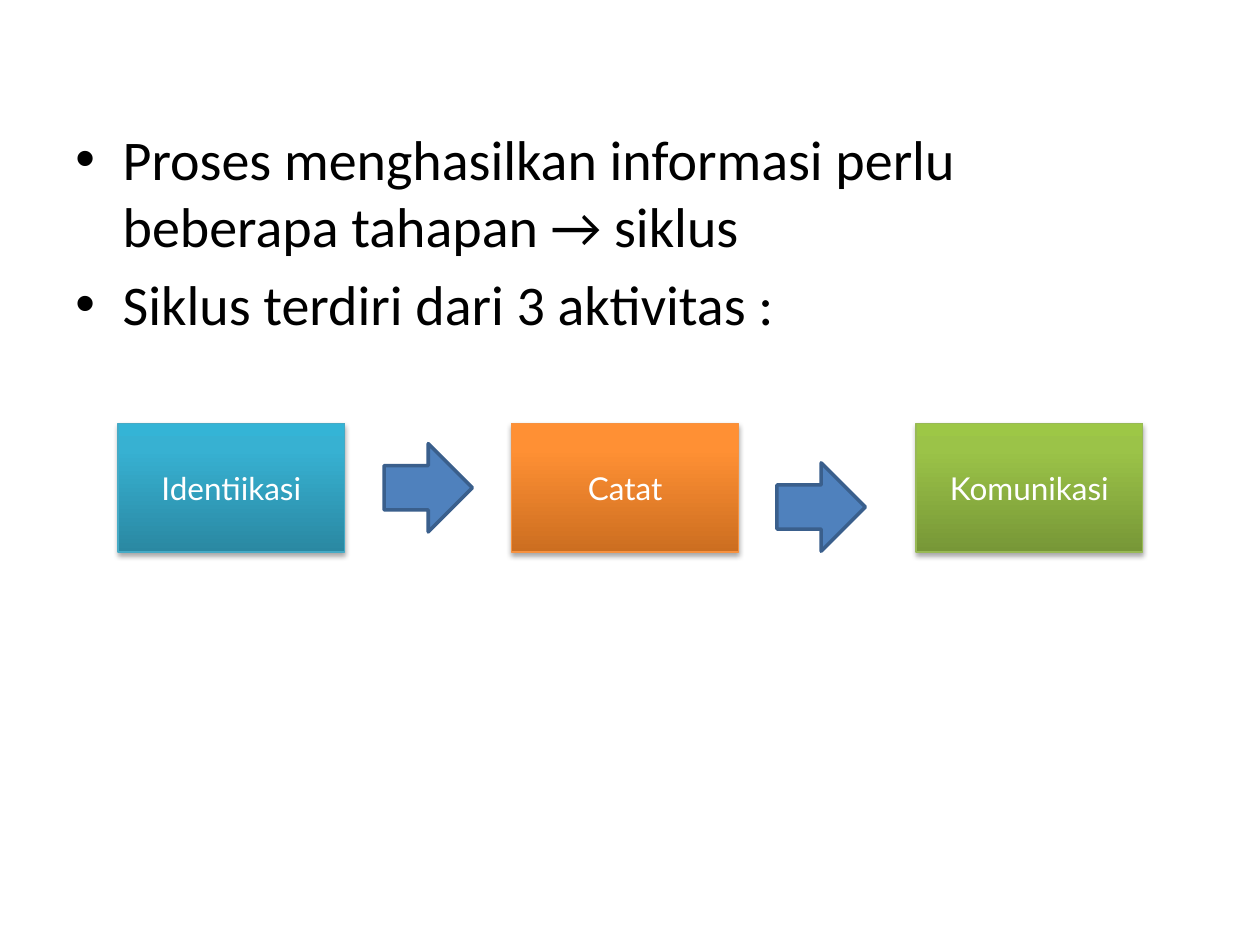
import copy

import pptx
import pptx.dml.color
import pptx.enum.shapes
import pptx.enum.text
import pptx.oxml.ns
import pptx.oxml.xmlchemy
import pptx.util
from lxml import etree

Pt = pptx.util.Pt
RGBColor = pptx.dml.color.RGBColor
qn = pptx.oxml.ns.qn
Shape = pptx.enum.shapes.MSO_SHAPE

BLACK = RGBColor(0x00, 0x00, 0x00)
WHITE = RGBColor(0xFF, 0xFF, 0xFF)
ARROW_FILL = RGBColor(0x4F, 0x81, 0xBD)
ARROW_LINE = RGBColor(0x3A, 0x5F, 0x8C)
TEAL = (RGBColor(0x2A, 0x88, 0xA2), RGBColor(0x37, 0xB1, 0xD2), RGBColor(0x34, 0xB4, 0xD6))
TEAL_LINE = RGBColor(0x46, 0xAA, 0xC5)
ORANGE = (RGBColor(0xCC, 0x6E, 0x20), RGBColor(0xFF, 0x90, 0x34), RGBColor(0xFF, 0x91, 0x36))
ORANGE_LINE = RGBColor(0xF6, 0x92, 0x40)
GREEN = (RGBColor(0x77, 0x97, 0x37), RGBColor(0x9B, 0xC3, 0x48), RGBColor(0x9D, 0xC7, 0x46))
GREEN_LINE = RGBColor(0x98, 0xB9, 0x55)

GRADIENT_POSITIONS = (0, 0.8, 1)
BULLETS = (
    "Proses menghasilkan informasi perlu beberapa tahapan → siklus",
    "Siklus terdiri dari 3 aktivitas :",
)
# Label, left offset, gradient colours, outline colour
ACTIVITIES = (
    ("Identiikasi", 0, TEAL, TEAL_LINE),
    ("Catat", 225, ORANGE, ORANGE_LINE),
    ("Komunikasi", 456, GREEN, GREEN_LINE),
)
ARROW_OFFSETS = ((152, 11.5), (376.5, 22.5))
ARROW_SIZE = 50.5


def format_text(paragraph, font_name, size, color):
    for run in paragraph.runs:
        run.font.name = font_name
        run.font.size = Pt(size)
        run.font.color.rgb = color


def add_bullets(slide, left, top, width, height):
    box = slide.shapes.add_textbox(Pt(left), Pt(top), Pt(width), Pt(height))
    text_frame = box.text_frame
    text_frame.word_wrap = True
    text_frame.text = "\n".join(BULLETS)
    for paragraph in text_frame.paragraphs:
        paragraph.space_before = Pt(6.4)
        format_text(paragraph, "Calibri", 32, BLACK)
        properties = paragraph._p.get_or_add_pPr()
        properties.set("marL", str(Pt(27)))
        properties.set("indent", str(Pt(-27)))
        etree.SubElement(properties, qn("a:buFont"), typeface="Arial")
        etree.SubElement(properties, qn("a:buChar"), char="•")


def set_gradient(shape, colors):
    """Fill from bottom to top with three colours."""
    shape.fill.gradient()
    shape.fill.gradient_angle = 90
    stop_list = shape._element.spPr.find(".//" + qn("a:gsLst"))
    stop_list.append(copy.deepcopy(stop_list[-1]))
    for stop, position, color in zip(shape.fill.gradient_stops, GRADIENT_POSITIONS, colors):
        stop.position = position
        stop.color.rgb = color


def set_soft_shadow(shape):
    shape.shadow.inherit = False
    effects = shape._element.spPr.find(qn("a:effectLst"))
    shadow = etree.SubElement(
        effects, qn("a:outerShdw"), blurRad=str(Pt(3.1)), dist=str(Pt(1.8)),
        dir="5400000", rotWithShape="0")
    color = etree.SubElement(shadow, qn("a:srgbClr"), val=str(BLACK))
    etree.SubElement(color, qn("a:alpha"), val="35000")


def add_activity(slide, left, top, width, height, label, colors, line_color):
    shape = slide.shapes.add_shape(Shape.RECTANGLE, Pt(left), Pt(top), Pt(width), Pt(height))
    set_gradient(shape, colors)
    shape.line.color.rgb = line_color
    shape.line.width = Pt(0.75)
    set_soft_shadow(shape)
    text_frame = shape.text_frame
    text_frame.text = label
    text_frame.vertical_anchor = pptx.enum.text.MSO_ANCHOR.MIDDLE
    paragraph = text_frame.paragraphs[0]
    paragraph.alignment = pptx.enum.text.PP_ALIGN.CENTER
    format_text(paragraph, "Lato", 18, WHITE)


def add_arrow(slide, left, top, size):
    arrow = slide.shapes.add_shape(Shape.RIGHT_ARROW, Pt(left), Pt(top), Pt(size), Pt(size))
    arrow.shadow.inherit = False
    arrow.fill.solid()
    arrow.fill.fore_color.rgb = ARROW_FILL
    arrow.line.color.rgb = ARROW_LINE
    arrow.line.width = Pt(2)


def add_cycle(slide, left, top, width, height):
    """Place the activities, each width by height, and the arrows between them."""
    for label, offset, colors, line_color in ACTIVITIES:
        add_activity(slide, left + offset, top, width, height, label, colors, line_color)
    for across, down in ARROW_OFFSETS:
        add_arrow(slide, left + across, top + down, ARROW_SIZE)


def main():
    presentation = pptx.Presentation()
    presentation.slide_width = Pt(720)
    presentation.slide_height = Pt(540)
    slide = presentation.slides.add_slide(presentation.slide_layouts[6])
    add_bullets(slide, 36, 67.5, 648, 196.5)
    add_cycle(slide, 67.5, 242, 129.5, 73.5)
    presentation.save("out.pptx")


if __name__ == "__main__":
    main()
